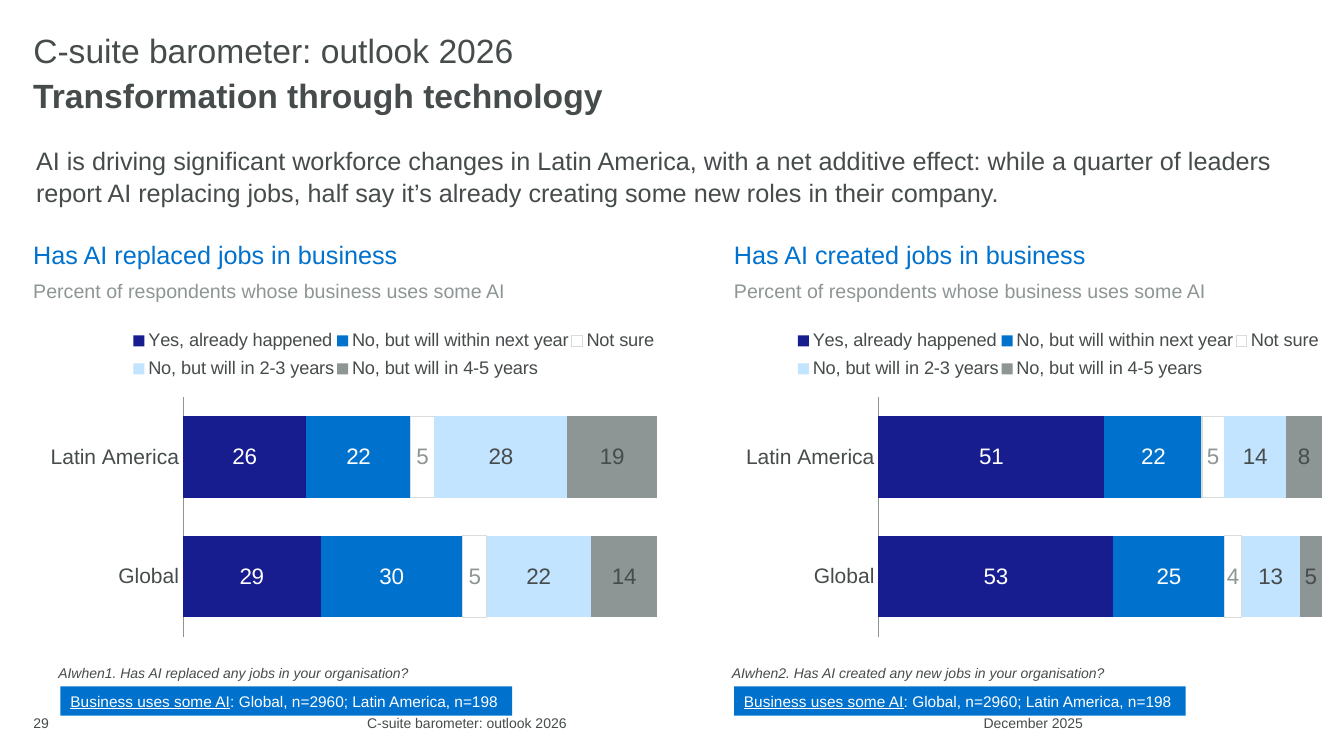
from dataclasses import dataclass

from lxml import etree
from pptx import Presentation
from pptx import util as u
from pptx.chart.data import CategoryChartData
from pptx.dml.color import RGBColor
from pptx.enum import chart as charts, shapes, text
from pptx.oxml import parse_xml
from pptx.oxml.ns import nsdecls, qn

EMU_PER_PX = 9144


@dataclass(frozen=True)
class Theme:
    """Colours, font and type sizes of the slide."""
    font: str = "Arial"
    ink: str = "464B4B"
    blue: str = "0072CE"
    navy: str = "171C8F"
    pale: str = "C2E4FF"
    grey: str = "8E9595"
    outline: str = "D9DCDC"
    white: str = "FFFFFF"
    title: int = 24
    lead: int = 18
    label: int = 16
    axis: int = 15
    subtitle: int = 14
    legend: int = 13
    base: int = 11
    small: int = 10


THEME = Theme()

SERIES = [
    ("Yes, already happened", THEME.navy, THEME.white),
    ("No, but will within next year", THEME.blue, THEME.white),
    ("Not sure", THEME.white, THEME.grey),
    ("No, but will in 2-3 years", THEME.pale, THEME.ink),
    ("No, but will in 4-5 years", THEME.grey, THEME.ink),
]
REGIONS = ["Latin America", "Global"]

PANELS = [
    dict(left=33, chart_left=37, note_left=48, base_left=60, plot=(0.235, 0.251, 0.765, 0.748),
         heading="Has AI replaced jobs in business",
         question="AIwhen1. Has AI replaced any jobs in your organisation?",
         values=[(26, 29), (22, 30), (5, 5), (28, 22), (19, 14)]),
    dict(left=728, chart_left=696, note_left=716, base_left=728, plot=(0.285, 0.251, 0.715, 0.748),
         heading="Has AI created jobs in business",
         question="AIwhen2. Has AI created any new jobs in your organisation?",
         values=[(51, 53), (22, 25), (5, 4), (14, 13), (8, 5)]),
]


def px(value):
    """Turn slide pixels into EMU."""
    return u.Emu(value * EMU_PER_PX)


def box(*sides):
    """Turn left, top, width and height into EMU."""
    return [px(side) for side in sides]


def style_font(font, size, color, bold=False, italic=False):
    """Apply the theme font with a size and colour."""
    font.name = THEME.font
    font.size = u.Pt(size)
    font.bold = bold
    font.italic = italic
    font.color.rgb = RGBColor.from_string(color)


def set_insets(frame, horizontal, vertical):
    """Set the inner margins of a text frame."""
    frame.margin_left = frame.margin_right = px(horizontal)
    frame.margin_top = frame.margin_bottom = px(vertical)


def add_text(slide, place, lines, insets=(0, 0), anchor=text.MSO_ANCHOR.TOP,
             align=text.PP_ALIGN.LEFT, spacing=None, after=0, bold=False, italic=False):
    """Add a text box with one paragraph per (wording, size, colour) line."""
    frame = slide.shapes.add_textbox(*box(*place)).text_frame
    frame.word_wrap = True
    frame.vertical_anchor = anchor
    set_insets(frame, *insets)
    frame.text = "\n".join(line[0] for line in lines)
    for paragraph, (_, size, color) in zip(frame.paragraphs, lines):
        paragraph.alignment = align
        paragraph.line_spacing = spacing
        paragraph.space_after = u.Pt(after)
        style_font(paragraph.runs[0].font, size, color, bold, italic)


def set_title(slide, wording):
    """Place and format the title placeholder."""
    title = slide.shapes.title
    title.left, title.top, title.width, title.height = box(33, 33, 618, 39)
    frame = title.text_frame
    frame.text = wording
    frame.vertical_anchor = text.MSO_ANCHOR.MIDDLE
    set_insets(frame, 0, 0)
    paragraph = frame.paragraphs[0]
    paragraph.alignment = text.PP_ALIGN.LEFT
    paragraph.line_spacing = 0.9
    style_font(paragraph.runs[0].font, THEME.title, THEME.ink)


def add_base_label(slide, left):
    """Add the blue strip that states the sample base."""
    shape = slide.shapes.add_shape(shapes.MSO_SHAPE.RECTANGLE, *box(left, 681, 448, 29))
    shape.shadow.inherit = False
    shape.fill.solid()
    shape.fill.fore_color.rgb = RGBColor.from_string(THEME.blue)
    shape.line.fill.background()
    frame = shape.text_frame
    frame.word_wrap = False
    frame.vertical_anchor = text.MSO_ANCHOR.MIDDLE
    set_insets(frame, 10, 5)
    paragraph = frame.paragraphs[0]
    paragraph.alignment = text.PP_ALIGN.LEFT
    for wording, underlined in (("Business uses some AI", True),
                                (": Global, n=2960; Latin America, n=198", False)):
        run = paragraph.add_run()
        run.text = wording
        style_font(run.font, THEME.base, THEME.white)
        run.font.underline = underlined


def set_layout(element, bounds, inner=False):
    """Give a plot area or legend a fixed position inside its chart."""
    for layout in element.findall(qn("c:layout")):
        element.remove(layout)
    layout = parse_xml(f"<c:layout {nsdecls('c')}><c:manualLayout/></c:layout>")
    settings = [("layoutTarget", "inner")] if inner else []
    settings += [("xMode", "edge"), ("yMode", "edge"), *zip("xywh", bounds)]
    for name, value in settings:
        etree.SubElement(layout[0], qn(f"c:{name}")).set("val", str(value))
    if inner:
        element.insert(0, layout)
    else:
        element.find(qn("c:legendPos")).addnext(layout)


def style_axes(chart):
    """Show the regions from top to bottom and hide the value scale."""
    regions = chart.category_axis
    regions.reverse_order = True
    regions.major_tick_mark = charts.XL_TICK_MARK.NONE
    regions.has_major_gridlines = False
    regions.format.line.color.rgb = RGBColor.from_string(THEME.grey)
    style_font(regions.tick_labels.font, THEME.axis, THEME.ink)
    scale = chart.value_axis
    scale.minimum_scale, scale.maximum_scale, scale.major_unit = 0, 100, 5
    scale.has_major_gridlines = False
    scale.visible = False


def style_series(series, fill, label_color):
    """Colour one answer and its value labels."""
    series.format.fill.solid()
    series.format.fill.fore_color.rgb = RGBColor.from_string(fill)
    if fill == THEME.white:
        series.format.line.color.rgb = RGBColor.from_string(THEME.outline)
        series.format.line.width = u.Pt(0.75)
    labels = series.data_labels
    labels.show_value = True
    labels.number_format = "0"
    labels.number_format_is_linked = False
    style_font(labels.font, THEME.label, label_color)


def add_answer_chart(slide, left, values, plot_bounds):
    """Add a stacked bar chart of the answers by region."""
    data = CategoryChartData(number_format="0")
    data.categories = REGIONS
    for (name, _, _), numbers in zip(SERIES, values):
        data.add_series(name, numbers)
    chart = slide.shapes.add_chart(
        charts.XL_CHART_TYPE.BAR_STACKED, *box(left, 314, 615, 318), data).chart
    style_font(chart.font, THEME.lead, THEME.ink)
    chart.has_title = False
    style_axes(chart)
    plot = chart.plots[0]
    plot.gap_width, plot.overlap = 47, 100
    plot.vary_by_categories = False
    for series, (_, fill, label_color) in zip(plot.series, SERIES):
        style_series(series, fill, label_color)
    chart.has_legend = True
    legend = chart.legend
    legend.position = charts.XL_LEGEND_POSITION.TOP
    legend.include_in_layout = False
    style_font(legend.font, THEME.legend, THEME.ink)
    plot_area = plot._element.getparent()
    set_layout(plot_area, plot_bounds, inner=True)
    set_layout(legend._element, (0.15, 0.02, 0.85, 0.2))


def add_panel(slide, panel):
    """Add one question with its heading, chart and notes."""
    add_text(slide, (panel["left"], 236, 600, 75),
             [(panel["heading"], THEME.lead, THEME.blue),
              ("Percent of respondents whose business uses some AI", THEME.subtitle, THEME.grey)],
             spacing=1.05, after=6)
    add_answer_chart(slide, panel["chart_left"], panel["values"], panel["plot"])
    add_text(slide, (panel["note_left"], 654, 419, 27),
             [(panel["question"], THEME.small, THEME.ink)], insets=(10, 5), italic=True)
    add_base_label(slide, panel["base_left"])


def main():
    """Build the slide and save it."""
    presentation = Presentation()
    presentation.slide_width, presentation.slide_height = px(1333), px(750)
    slide = presentation.slides.add_slide(presentation.slide_layouts[5])
    middle, align = text.MSO_ANCHOR.MIDDLE, text.PP_ALIGN
    set_title(slide, "C-suite barometer: outlook 2026")
    add_text(slide, (33, 74, 867, 39),
             [("Transformation through technology", THEME.title, THEME.ink)],
             anchor=middle, spacing=1.05, after=6, bold=True)
    add_text(slide, (26, 138, 1250, 79),
             [("AI is driving significant workforce changes in Latin America, with a net additive "
               "effect: while a quarter of leaders report AI replacing jobs, half say it’s already "
               "creating some new roles in their company.", THEME.lead, THEME.ink)],
             insets=(10, 5), spacing=1.05, after=6)
    for panel in PANELS:
        add_panel(slide, panel)
    for left, width, wording, side in ((33, 98, "29", align.LEFT),
                                       (131, 664, "C-suite barometer: outlook 2026", align.CENTER),
                                       (936, 138, "December 2025", align.RIGHT)):
        add_text(slide, (left, 702, width, 30), [(wording, THEME.small, THEME.ink)],
                 insets=(0, 5), anchor=middle, align=side)
    presentation.save("out.pptx")


if __name__ == "__main__":
    main()
